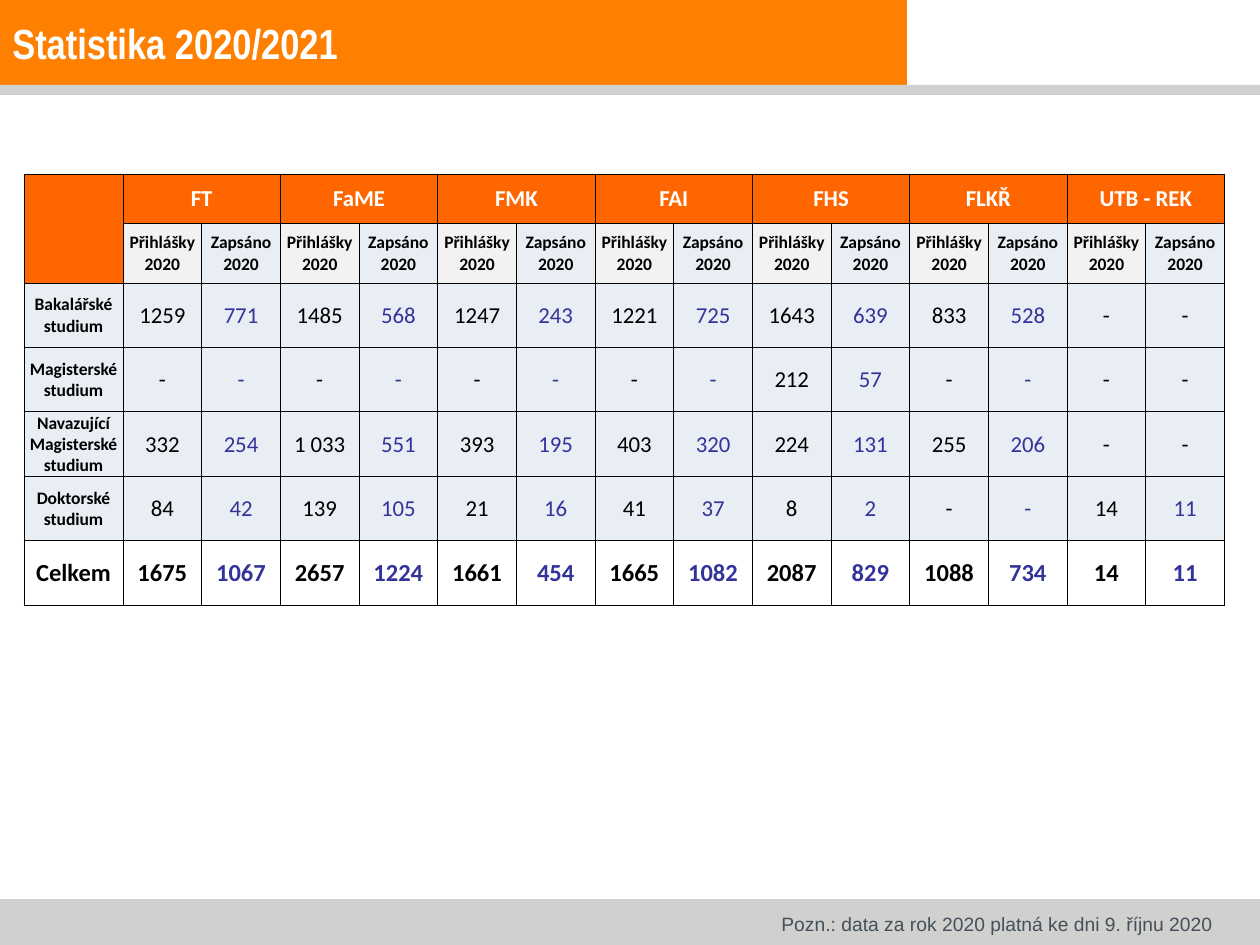
import pptx
import pptx.util
import pptx.dml.color
import pptx.enum.text
import pptx.enum.shapes
import lxml.etree
from pptx.oxml.ns import qn

RGB = pptx.dml.color.RGBColor
ORANGE = RGB(0xFF, 0x80, 0x01)
HEAD = RGB(0xFF, 0x66, 0x00)
GREY = RGB(0xD0, 0xD0, 0xCE)
SLATE = RGB(0x46, 0x50, 0x5A)
PALE = RGB(0xF2, 0xF2, 0xF2)
BLUISH = RGB(0xE9, 0xED, 0xF4)
WHITE = RGB(0xFF, 0xFF, 0xFF)
BLACK = RGB(0, 0, 0)
NAVY = RGB(0x33, 0x33, 0x99)

Pt = pptx.util.Pt
MID = pptx.enum.text.MSO_ANCHOR.MIDDLE
PX = 914400 / 126


def px(n):
    return pptx.util.Emu(round(n * PX))


def style(par, name, size, color, bold=False):
    font = par.font
    font.name, font.size, font.bold = name, Pt(size), bold
    font.color.rgb = color


deck = pptx.Presentation()
deck.slide_width, deck.slide_height = px(1260), px(945)
slide = deck.slides.add_slide(deck.slide_layouts[6])
shapes = slide.shapes

for x, y, w, h, color in [
    (0, 0, 907, 85, ORANGE),
    (0, 899, 1260, 46, GREY),
    (0, 85, 1260, 10, GREY),
]:
    bar = shapes.add_shape(pptx.enum.shapes.MSO_SHAPE.RECTANGLE, px(x), px(y), px(w), px(h))
    bar.shadow.inherit = False
    bar.fill.solid()
    bar.fill.fore_color.rgb = color
    bar.line.fill.background()

title = shapes.add_textbox(0, 0, px(907), px(85)).text_frame
title.word_wrap = True
title.vertical_anchor = MID
par = title.paragraphs[0]
run = par.add_run()
run.text = "Statistika 2020/2021"
style(par, "Arial Narrow", 24, WHITE, True)
glow = lxml.etree.SubElement(run.font._element, qn("a:effectLst"))
cast = lxml.etree.SubElement(glow, qn("a:outerShdw"), dist="38100", dir="2700000")
tint = lxml.etree.SubElement(cast, qn("a:srgbClr"), val="808080")

units = ["FT", "FaME", "FMK", "FAI", "FHS", "FLKŘ", "UTB - REK"]
rows = [
    [""] + [text for unit in units for text in (unit, "")],
    [""] + ["Přihlášky 2020", "Zapsáno 2020"] * len(units),
    ["Bakalářské studium", "1259", "771", "1485", "568", "1247", "243", "1221", "725",
     "1643", "639", "833", "528", "-", "-"],
    ["Magisterské studium", "-", "-", "-", "-", "-", "-", "-", "-",
     "212", "57", "-", "-", "-", "-"],
    ["Navazující Magisterské studium", "332", "254", "1 033", "551", "393", "195", "403", "320",
     "224", "131", "255", "206", "-", "-"],
    ["Doktorské studium", "84", "42", "139", "105", "21", "16", "41", "37",
     "8", "2", "-", "-", "14", "11"],
    ["Celkem", "1675", "1067", "2657", "1224", "1661", "454", "1665", "1082",
     "2087", "829", "1088", "734", "14", "11"],
]
last = len(rows) - 1
end = len(rows[0]) - 1
table = shapes.add_table(len(rows), end + 1, px(24), px(174), px(1201), px(431)).table
for c, col in enumerate(table.columns):
    col.width = px(99) if c == 0 else px(1102 / end)
for r, row in enumerate(table.rows):
    row.height = px((49, 60)[r]) if r < 2 else px(322 / 5)

for r, row in enumerate(rows):
    for c, text in enumerate(row):
        cell = table.cell(r, c)
        cell.margin_left = cell.margin_right = cell.margin_top = px(1)
        cell.margin_bottom = 0
        cell.vertical_anchor = MID
        props = cell._tc.get_or_add_tcPr()
        for side in ("lnL", "lnR", "lnT", "lnB"):
            line = lxml.etree.SubElement(props, qn("a:" + side), w=str(Pt(0.5)))
            paint = lxml.etree.SubElement(line, qn("a:solidFill"))
            lxml.etree.SubElement(paint, qn("a:srgbClr"), val=str(BLACK))
        if r == last:
            cell.fill.background()
        else:
            cell.fill.solid()
            if r == 0 or (r == 1 and c == 0):
                cell.fill.fore_color.rgb = HEAD
            else:
                cell.fill.fore_color.rgb = PALE if r == 1 and c % 2 else BLUISH

        if r == 0:
            size, bold, color = 13, True, WHITE
        elif r == last:
            size, bold, color = 14, True, BLACK
        elif r == 1 or c == 0:
            size, bold, color = 10, True, BLACK
        else:
            size, bold, color = 13, False, BLACK
        if r > 1 and c > 0 and c % 2 == 0 and not (c == end and text == "-"):
            color = NAVY
        cell.text = text
        par = cell.text_frame.paragraphs[0]
        par.alignment = pptx.enum.text.PP_ALIGN.CENTER
        style(par, "Calibri", size, color, bold)

table.cell(0, 0).merge(table.cell(1, 0))
for c in range(1, end, 2):
    table.cell(0, c).merge(table.cell(0, c + 1))

note = shapes.add_textbox(px(769), px(906), px(459), px(36)).text_frame
note.word_wrap = False
note.auto_size = pptx.enum.text.MSO_AUTO_SIZE.SHAPE_TO_FIT_TEXT
par = note.paragraphs[0]
par.text = "Pozn.: data za rok 2020 platná ke dni 9. říjnu 2020"
style(par, "Arial", 11, SLATE)

deck.save("out.pptx")
